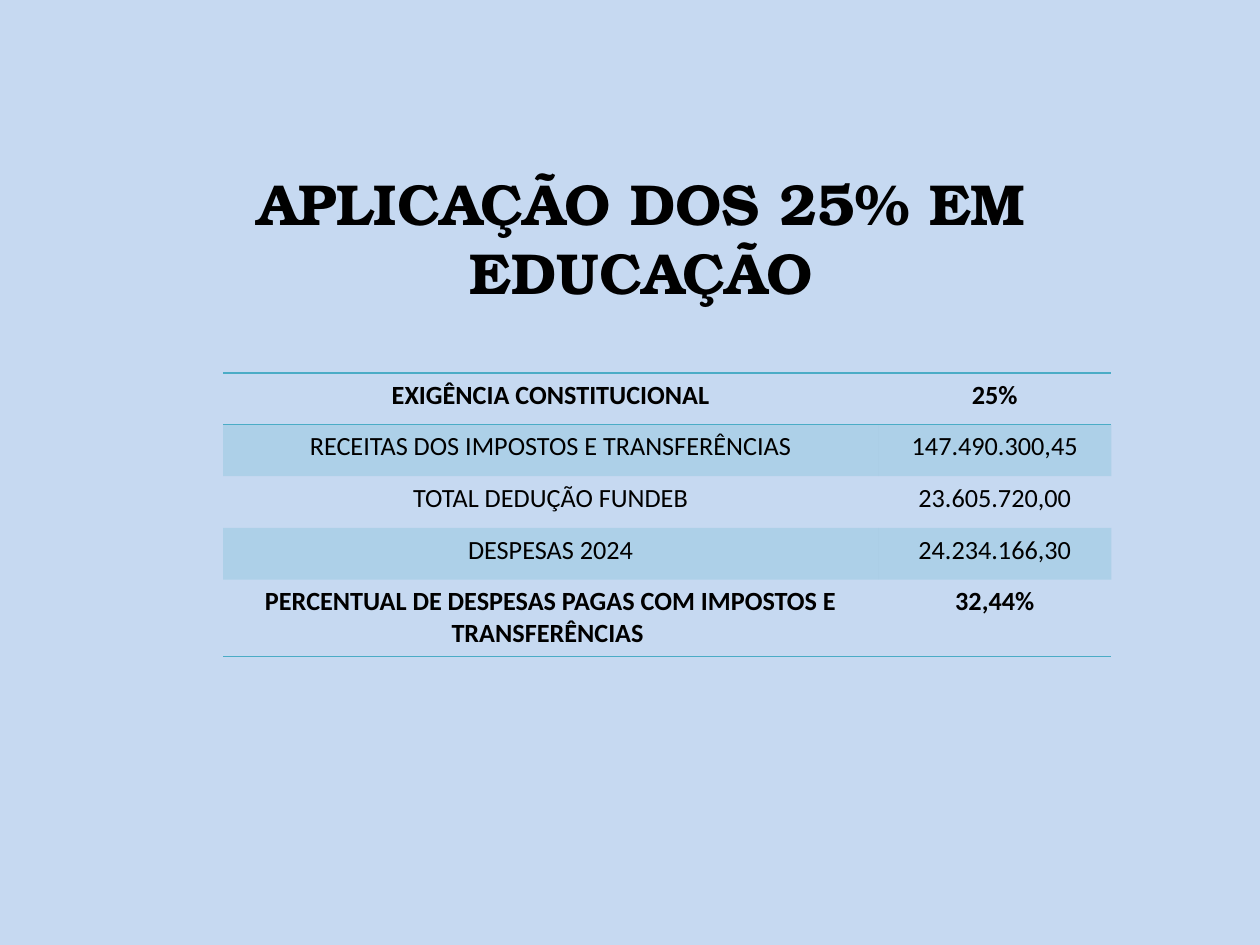
from typing import NamedTuple

from lxml.etree import SubElement
from pptx import Presentation
from pptx.dml.color import RGBColor
from pptx.enum.text import MSO_ANCHOR, MSO_AUTO_SIZE, PP_ALIGN
from pptx.oxml import parse_xml
from pptx.oxml.ns import nsdecls, qn
from pptx.table import _Cell as Cell
from pptx.text.text import _Paragraph as Paragraph
from pptx.util import Inches, Pt

SKY = RGBColor(0xC6, 0xD9, 0xF1)
TEAL = RGBColor(0x4B, 0xAC, 0xC6)
BLACK = RGBColor(0, 0, 0)
PLAIN_TABLE_STYLE = "{2D5ABB26-0587-4C30-8999-92F81FD0307C}"


class BudgetLine(NamedTuple):
    label: str
    amount: str
    bold: bool = False
    shaded: bool = False
    rules: tuple[str, ...] = ()


BUDGET_LINES = [
    BudgetLine("EXIGÊNCIA CONSTITUCIONAL", "25%", bold=True, rules=("lnT", "lnB")),
    BudgetLine("RECEITAS DOS IMPOSTOS E TRANSFERÊNCIAS", "147.490.300,45", shaded=True),
    BudgetLine("TOTAL DEDUÇÃO FUNDEB", "23.605.720,00"),
    BudgetLine("DESPESAS 2024", "24.234.166,30", shaded=True),
    BudgetLine("PERCENTUAL DE DESPESAS PAGAS COM IMPOSTOS E TRANSFERÊNCIAS ", "32,44%",
               bold=True, rules=("lnB",)),
]


def add_centred_run(paragraph: Paragraph, text: str, font: str, size: float, bold: bool) -> None:
    paragraph.alignment = PP_ALIGN.CENTER
    run = paragraph.add_run()
    run.text = text
    run.font.name = font
    run.font.size = Pt(size)
    run.font.bold = bold
    run.font.color.rgb = BLACK


def shade(cell: Cell) -> None:
    cell.fill.solid()
    cell.fill.fore_color.rgb = TEAL
    colour = cell._tc.tcPr.find(qn("a:solidFill")).find(qn("a:srgbClr"))
    SubElement(colour, qn("a:alpha"), val="20000")


def add_rules(cell: Cell, sides: tuple[str, ...]) -> None:
    properties = cell._tc.get_or_add_tcPr()
    for position, side in enumerate(sides):
        properties.insert(position, parse_xml(
            f'<a:{side} {nsdecls("a")} w="{Pt(1)}"><a:solidFill>'
            f'<a:srgbClr val="{TEAL}"/></a:solidFill></a:{side}>'))


def fill_cell(cell: Cell, text: str, line: BudgetLine) -> None:
    add_centred_run(cell.text_frame.paragraphs[0], text, "Calibri", 15, line.bold)
    if line.shaded:
        shade(cell)
    else:
        cell.fill.background()
    add_rules(cell, line.rules)


def main() -> None:
    deck = Presentation()
    deck.slide_width, deck.slide_height = Inches(10), Inches(7.5)
    slide = deck.slides.add_slide(deck.slide_layouts[5])
    slide.background.fill.solid()
    slide.background.fill.fore_color.rgb = SKY

    title = slide.shapes.title
    title.left, title.top = Inches(0.59), Inches(0.76)
    title.width, title.height = Inches(9), Inches(1.5)
    heading = title.text_frame
    heading.auto_size = MSO_AUTO_SIZE.NONE
    heading.vertical_anchor = MSO_ANCHOR.TOP
    heading.margin_top = Inches(0.57)
    add_centred_run(heading.paragraphs[0], "APLICAÇÃO DOS 25% EM EDUCAÇÃO",
                    "TeX Gyre Bonum", 33, True)

    budget = slide.shapes.add_table(len(BUDGET_LINES), 2, Inches(1.77), Inches(2.96),
                                    Inches(7.05), Inches(2.05)).table
    budget.first_row = budget.horz_banding = False
    budget._tbl.tblPr.find(qn("a:tableStyleId")).text = PLAIN_TABLE_STYLE
    for column, width in zip(budget.columns, (5.2, 1.85)):
        column.width = Inches(width)
    for row, line in zip(budget.rows, BUDGET_LINES):
        row.height = Inches(0.41)
        for cell, text in zip(row.cells, (line.label, line.amount)):
            fill_cell(cell, text, line)

    deck.save("out.pptx")


if __name__ == "__main__":
    main()
